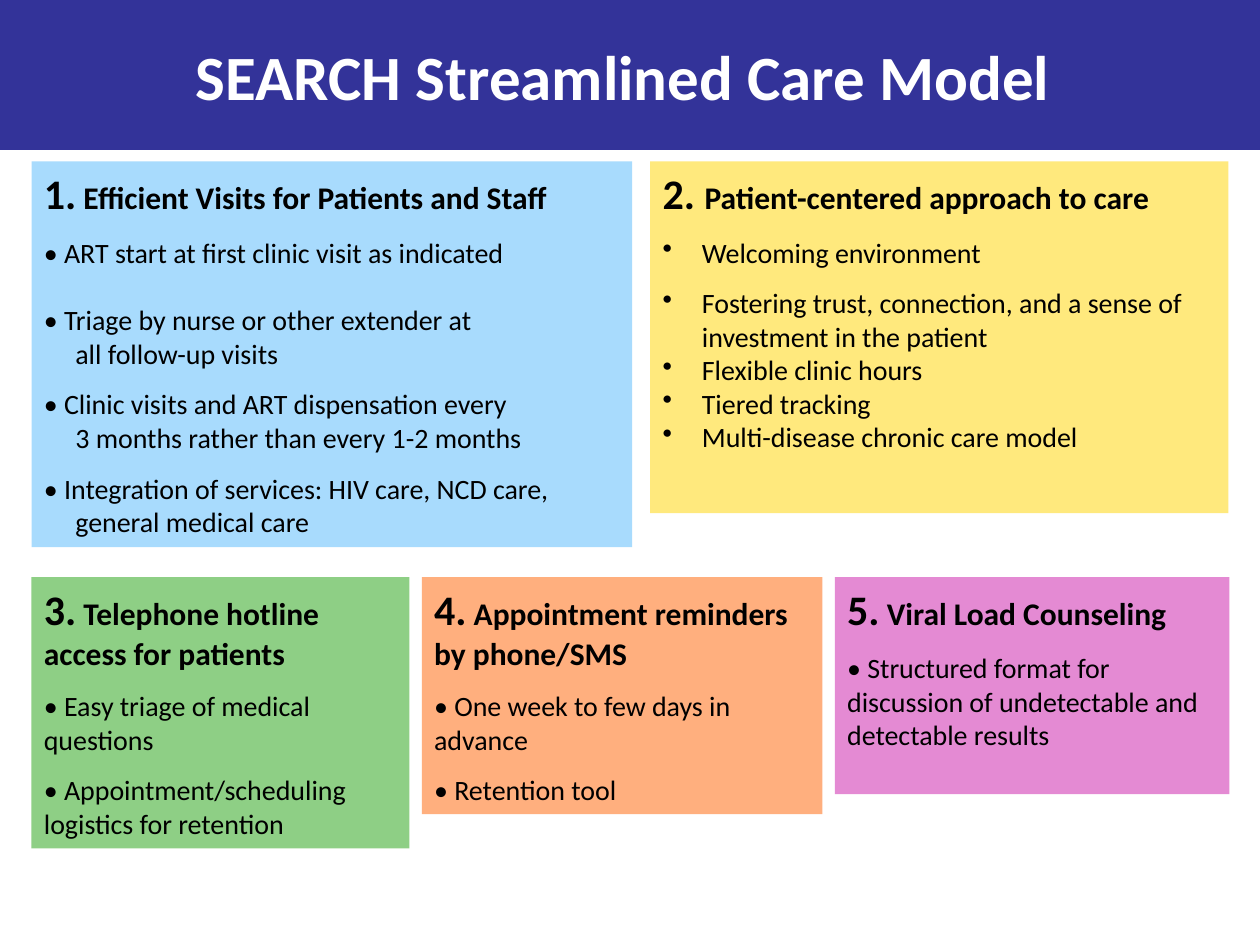
import pptx
import pptx.util
import pptx.dml.color
import pptx.enum.shapes
import pptx.enum.text
import pptx.oxml.ns
import lxml.etree

Pt = pptx.util.Pt
COLORS = {
    "banner": "333399", "blue": "A8DBFD", "yellow": "FFE97D", "green": "8ECF85",
    "orange": "FFAF7E", "pink": "E48AD3", "text": "000000", "title": "FFFFFF",
}
TITLE = "SEARCH Streamlined Care Model "
GAP = 9.75
LEFT = 18

ROWS = [
    {"top": 92.2, "gap": 10.2, "cards": [
        {"color": "blue", "width": 343.3, "height": 220.4, "hanging": 18,
         "heading": ("1.", " Efficient Visits for Patients and Staff"),
         "items": [
             (GAP, "• ART start at first clinic visit as indicated"),
             (2 * GAP, "•\u00a0Triage by nurse or other extender at\vall follow-up visits"),
             (GAP, "• Clinic visits and ART dispensation every\v3 months rather than every 1-2 months"),
             (GAP, "• Integration of services: HIV care, NCD care,\vgeneral medical care")]},
        {"color": "yellow", "width": 330.5, "height": 201, "hanging": 22.5, "bullet": "•",
         "heading": ("2. ", "Patient-centered approach to care"),
         "items": [
             (GAP, "Welcoming environment"),
             (GAP, "Fostering trust, connection, and a sense of investment in the patient"),
             (0, "Flexible clinic hours"),
             (0, "Tiered tracking"),
             (0, "Multi-disease chronic care model")]},
    ]},
    {"top": 329.8, "gap": 7, "cards": [
        {"color": "green", "width": 216, "height": 155,
         "heading": ("3.", " Telephone hotline access for patients"),
         "items": [
             (GAP, "• Easy triage of medical questions"),
             (GAP, "•\u00a0Appointment/scheduling logistics for retention")]},
        {"color": "orange", "width": 229, "height": 135.5,
         "heading": ("4.", " Appointment reminders by phone/SMS"),
         "items": [
             (GAP, "• One week to few days in advance"),
             (GAP, "•\u00a0Retention tool")]},
        {"color": "pink", "width": 225.5, "height": 124,
         "heading": ("5.", " Viral Load Counseling"),
         "items": [
             (GAP, "• Structured format for discussion of undetectable and detectable results")]},
    ]},
]

FORMATS = {
    "title": {"name": "Calibri", "size": Pt(36), "bold": True},
    "number": {"name": "Calibri", "size": Pt(24), "bold": True},
    "heading": {"name": "Calibri", "size": Pt(18), "bold": True},
    "item": {"name": "Calibri", "size": Pt(16), "bold": False},
}


def rgb(name):
    return pptx.dml.color.RGBColor.from_string(COLORS[name])


def format_font(font, style, color="text"):
    for attribute, value in FORMATS[style].items():
        setattr(font, attribute, value)
    font.color.rgb = rgb(color)


def add_block(slide, left, top, width, height, color):
    shape = slide.shapes.add_shape(
        pptx.enum.shapes.MSO_SHAPE.RECTANGLE, Pt(left), Pt(top), Pt(width), Pt(height))
    shape.shadow.inherit = False
    shape.fill.solid()
    shape.fill.fore_color.rgb = rgb(color)
    shape.line.fill.background()
    shape.text_frame.word_wrap = True
    return shape


def indent_paragraph(paragraph, hanging, bullet):
    properties = paragraph._p.get_or_add_pPr()
    properties.set("marL", str(Pt(hanging)))
    properties.set("indent", str(-Pt(hanging)))
    if bullet:
        element = lxml.etree.SubElement(properties, pptx.oxml.ns.qn("a:buChar"))
        element.set("char", bullet)


def add_card(slide, card, left, top):
    shape = add_block(slide, left, top, card["width"], card["height"], card["color"])
    frame = shape.text_frame
    frame.vertical_anchor = pptx.enum.text.MSO_ANCHOR.TOP
    paragraph = frame.paragraphs[0]
    paragraph.alignment = pptx.enum.text.PP_ALIGN.LEFT
    for text, style in zip(card["heading"], ("number", "heading")):
        run = paragraph.add_run()
        run.text = text
        format_font(run.font, style)
    for space, text in card["items"]:
        paragraph = frame.add_paragraph()
        paragraph.text = text
        paragraph.alignment = pptx.enum.text.PP_ALIGN.LEFT
        paragraph.space_before = Pt(space)
        indent_paragraph(paragraph, card.get("hanging", 0), card.get("bullet"))
        for run in paragraph.runs:
            format_font(run.font, "item")


def main():
    presentation = pptx.Presentation()
    presentation.slide_width, presentation.slide_height = Pt(720), Pt(540)
    slide = presentation.slides.add_slide(presentation.slide_layouts[6])

    banner = add_block(slide, 0, 0, 720, 85.7, "banner")
    banner.text_frame.vertical_anchor = pptx.enum.text.MSO_ANCHOR.MIDDLE
    paragraph = banner.text_frame.paragraphs[0]
    paragraph.alignment = pptx.enum.text.PP_ALIGN.CENTER
    run = paragraph.add_run()
    run.text = TITLE
    format_font(run.font, "title", "title")

    for row in ROWS:
        left = LEFT
        for card in row["cards"]:
            add_card(slide, card, left, row["top"])
            left += card["width"] + row["gap"]

    presentation.save("out.pptx")


if __name__ == "__main__":
    main()
